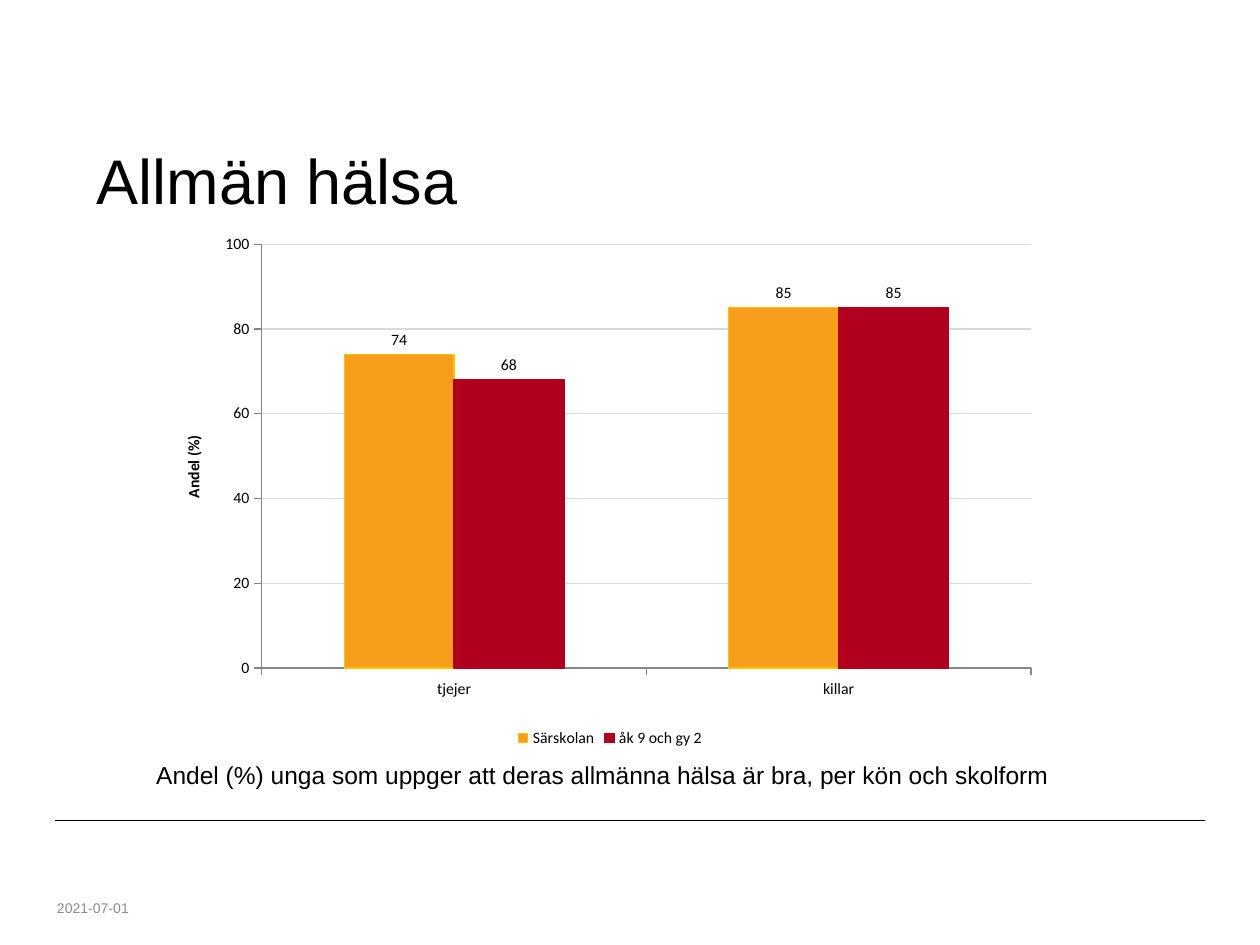
import pptx
import pptx.chart.data
import pptx.dml.color
import pptx.enum.chart
import pptx.enum.shapes
import pptx.enum.text
import pptx.oxml
import pptx.oxml.ns
import pptx.util
from pptx.util import Cm

TITLE = "Allmän hälsa"
CAPTION = "Andel (%) unga som uppger att deras allmänna hälsa är bra, per kön och skolform"
DATE = "2021-07-01"
AXIS_TITLE = "Andel (%)"
CATEGORIES = ["tjejer", "killar"]
SERIES = [  # name, values, fill, outline
    ("Särskolan", (74, 85), "F99D1C", "FFC000"),
    ("åk 9 och gy 2", (68, 85), "B1001E", "B1001E"),
]
PLOT_LAYOUT = {"x": 0.101, "y": 0.038, "w": 0.881, "h": 0.803}
AXIS_GREY = "868686"


def color(value):
    return pptx.dml.color.RGBColor.from_string(value)


def set_line(line, value, width=0.75):
    line.color.rgb = color(value)
    line.width = pptx.util.Pt(width)


def set_font(font, size, name, value="000000", bold=False):
    font.size = pptx.util.Pt(size)
    font.name = name
    font.bold = bold
    font.color.rgb = color(value)


def add_text(page, text, left, top, width, height, size, value="000000", anchor="MIDDLE"):
    box = page.shapes.add_textbox(Cm(left), Cm(top), Cm(width), Cm(height))
    frame = box.text_frame
    frame.word_wrap = True
    frame.vertical_anchor = pptx.enum.text.MSO_ANCHOR[anchor]
    span = frame.paragraphs[0].add_run()
    span.text = text
    set_font(span.font, size, "Arial", value)


def add_rule(page, left, right, top):
    rule = page.shapes.add_connector(
        pptx.enum.shapes.MSO_CONNECTOR.STRAIGHT, Cm(left), Cm(top), Cm(right), Cm(top))
    set_line(rule.line, "000000", 0.5)
    properties = rule._element.spPr
    properties.append(properties.makeelement(pptx.oxml.ns.qn("a:effectLst"), {}))


def place_plot(chart, layout):
    """Fix the inner plot area at fractions of the chart's size."""
    area = chart._chartSpace.chart.plotArea
    for old in area.findall(pptx.oxml.ns.qn("c:layout")):
        area.remove(old)
    modes = '<c:layoutTarget val="inner"/><c:xMode val="edge"/><c:yMode val="edge"/>'
    sizes = "".join(f'<c:{key} val="{value}"/>' for key, value in layout.items())
    area.insert(0, pptx.oxml.parse_xml(
        f'<c:layout {pptx.oxml.ns.nsdecls("c")}><c:manualLayout>{modes}{sizes}'
        "</c:manualLayout></c:layout>"))


def add_health_chart(page, left, top, width, height):
    data = pptx.chart.data.CategoryChartData()
    data.categories = CATEGORIES
    for name, values, _, _ in SERIES:
        data.add_series(name, values)
    chart = page.shapes.add_chart(
        pptx.enum.chart.XL_CHART_TYPE.COLUMN_CLUSTERED,
        Cm(left), Cm(top), Cm(width), Cm(height), data).chart
    set_font(chart.font, 9, "Calibri")
    chart.has_title = False
    chart.has_legend = True
    chart.legend.position = pptx.enum.chart.XL_LEGEND_POSITION.BOTTOM
    chart.legend.include_in_layout = False

    plot = chart.plots[0]
    plot.gap_width = 150
    plot.overlap = 0
    plot.vary_by_categories = False
    for series, (_, _, fill, outline) in zip(plot.series, SERIES):
        series.format.fill.solid()
        series.format.fill.fore_color.rgb = color(fill)
        set_line(series.format.line, outline)
        series.data_labels.show_value = True
        series.data_labels.position = pptx.enum.chart.XL_LABEL_POSITION.OUTSIDE_END

    for axis in (chart.category_axis, chart.value_axis):
        set_line(axis.format.line, AXIS_GREY)
        axis.major_tick_mark = pptx.enum.chart.XL_TICK_MARK.OUTSIDE
    scale = chart.value_axis
    scale.minimum_scale, scale.maximum_scale, scale.major_unit = 0, 100, 20
    scale.has_major_gridlines = True
    set_line(scale.major_gridlines.format.line, "D9D9D9")
    heading = scale.axis_title.text_frame
    heading.text = AXIS_TITLE
    set_font(heading.paragraphs[0].runs[0].font, 9, "Calibri", bold=True)
    place_plot(chart, PLOT_LAYOUT)


def main():
    deck = pptx.Presentation()
    deck.slide_width, deck.slide_height = Cm(25.4), Cm(19.05)
    page = deck.slides.add_slide(deck.slide_layouts[6])
    add_rule(page, 1.1, 24.3, 16.53)
    add_text(page, TITLE, 1.7, 2.72, 20.2, 1.8, 36)
    add_text(page, DATE, 0.9, 18, 2, 0.6, 8, "8C8C8C")
    add_text(page, CAPTION, 2.9, 15.19, 19.9, 0.86, 14, anchor="TOP")
    add_health_chart(page, 3.5, 4.52, 17.6, 10.64)
    deck.save("out.pptx")


if __name__ == "__main__":
    main()
